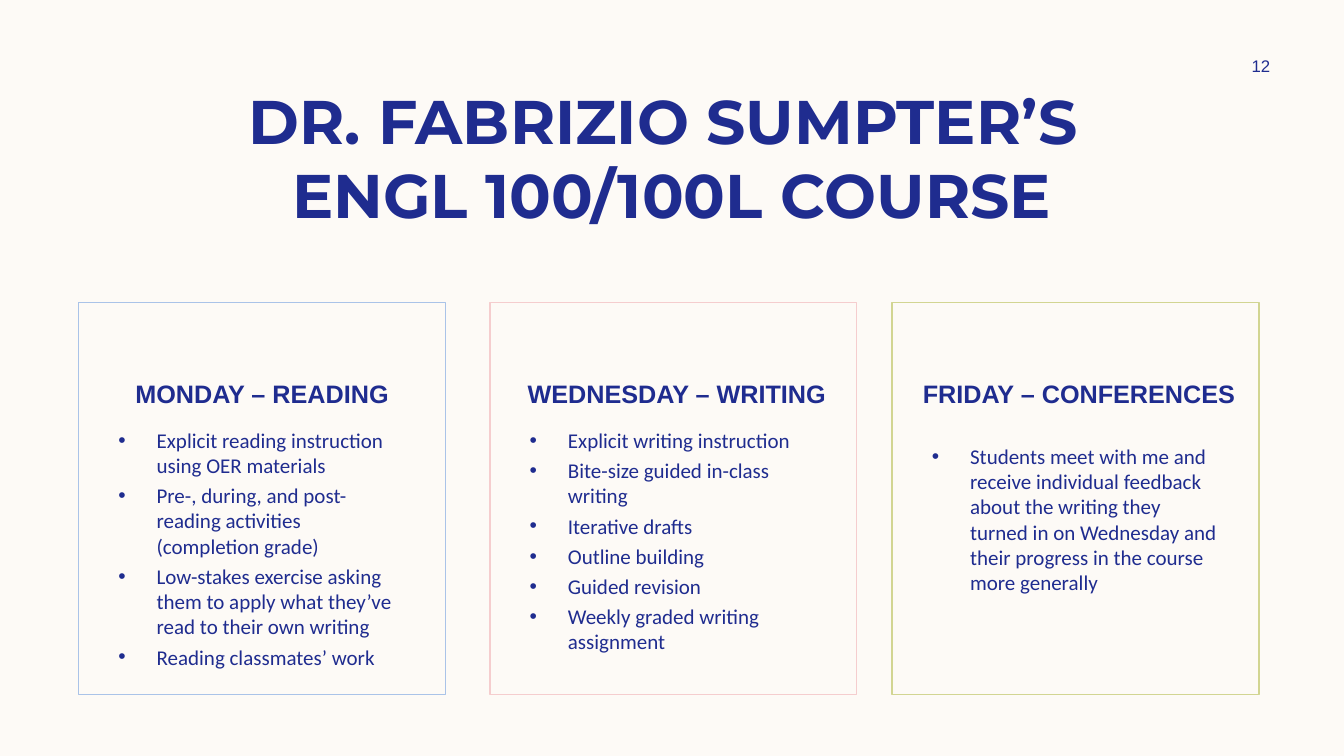
from dataclasses import dataclass

from lxml import etree
from pptx import Presentation
from pptx.dml.color import RGBColor
from pptx.enum.shapes import MSO_SHAPE
from pptx.enum.text import MSO_ANCHOR, PP_ALIGN
from pptx.oxml.ns import qn
from pptx.util import Inches, Pt

RECTANGLE = MSO_SHAPE.RECTANGLE
TOP, MIDDLE = MSO_ANCHOR.TOP, MSO_ANCHOR.MIDDLE
LEFT, CENTER = PP_ALIGN.LEFT, PP_ALIGN.CENTER

WIDTH, HEIGHT = Inches(13.33), Inches(7.5)
COLUMNS, ROWS = 160, 90
NAVY, CREAM = "1F2C8F", "FDFAF6"
CARD_ROW, CARD_COLUMNS, CARD_ROWS = 36, 43.68, 46.68
LIST_INSET, LIST_COLUMNS, LIST_ROWS = 3.55, 36.36, 28.92
BULLET_INDENT = Inches(0.38)


@dataclass(frozen=True)
class Area:
    column: float
    row: float
    columns: float
    rows: float

    def emu(self) -> tuple[int, int, int, int]:
        return (
            round(WIDTH * self.column / COLUMNS),
            round(HEIGHT * self.row / ROWS),
            round(WIDTH * self.columns / COLUMNS),
            round(HEIGHT * self.rows / ROWS),
        )


@dataclass(frozen=True)
class DayCard:
    heading: str
    border: str
    column: float
    list_row: float
    activities: tuple[str, ...]


DAY_CARDS = (
    DayCard("MONDAY – READING", "AAC3E8", 9.36, 50.28, (
        "Explicit reading instruction using OER materials",
        "Pre-, during, and post-reading activities (completion grade)",
        "Low-stakes exercise asking them to apply what they’ve read to their own writing",
        "Reading classmates’ work",
    )),
    DayCard(" WEDNESDAY – WRITING", "F5CDCE", 58.32, 50.28, (
        "Explicit writing instruction",
        "Bite-size guided in-class writing",
        "Iterative drafts",
        "Outline building",
        "Guided revision",
        "Weekly graded writing assignment",
    )),
    DayCard(" FRIDAY – CONFERENCES", "D2D592", 106.2, 52.2, (
        "Students meet with me and receive individual feedback about the writing they "
        "turned in on Wednesday and their progress in the course more generally",
    )),
)


def color(value: str) -> RGBColor:
    return RGBColor.from_string(value)


def add_bullet(paragraph) -> None:
    paragraph.space_before = Pt(3.6)
    properties = paragraph._p.get_or_add_pPr()
    properties.set("marL", str(BULLET_INDENT))
    properties.set("indent", str(-BULLET_INDENT))
    etree.SubElement(properties, qn("a:buFont")).set("typeface", "Arial")
    etree.SubElement(properties, qn("a:buChar")).set("char", "•")


def write(shape, *texts: str, font: str, size: float, bold: bool = False,
          align=CENTER, anchor=TOP, top_inset: float = 0.05, bullets: bool = False) -> None:
    frame = shape.text_frame
    frame.word_wrap = True
    frame.vertical_anchor = anchor
    frame.margin_top = Inches(top_inset)
    for index, text in enumerate(texts):
        paragraph = frame.add_paragraph() if index else frame.paragraphs[0]
        paragraph.text = text
        paragraph.alignment = align
        if bullets:
            add_bullet(paragraph)
        for run in paragraph.runs:
            run.font.name = font
            run.font.size = Pt(size)
            run.font.bold = bold
            run.font.color.rgb = color(NAVY)


def add_text(slide, area: Area, *texts: str, **text_format) -> None:
    write(slide.shapes.add_textbox(*area.emu()), *texts, **text_format)


def add_day_card(slide, card: DayCard) -> None:
    area = Area(card.column, CARD_ROW, CARD_COLUMNS, CARD_ROWS)
    frame = slide.shapes.add_shape(RECTANGLE, *area.emu())
    frame.shadow.inherit = False
    frame.fill.background()
    frame.line.color.rgb = color(card.border)
    frame.line.width = Pt(1)
    write(frame, card.heading, font="Arial", size=18, bold=True, top_inset=0.75)
    list_area = Area(card.column + LIST_INSET, card.list_row, LIST_COLUMNS, LIST_ROWS)
    add_text(slide, list_area, *card.activities,
             font="Calibri", size=15, align=LEFT, bullets=True)


def main() -> None:
    presentation = Presentation()
    presentation.slide_width, presentation.slide_height = WIDTH, HEIGHT
    slide = presentation.slides.add_slide(presentation.slide_layouts[6])
    slide.background.fill.solid()
    slide.background.fill.fore_color.rgb = color(CREAM)

    add_text(slide, Area(10, 9.24, 140, 10.08),
             "DR. FABRIZIO SUMPTER’S \nENGL 100/100L COURSE",
             font="Montserrat", size=44, bold=True)
    add_text(slide, Area(143.64, 6, 12.96, 3.6), "12",
             font="Arial", size=12, anchor=MIDDLE)
    for card in DAY_CARDS:
        add_day_card(slide, card)

    presentation.save("out.pptx")


if __name__ == "__main__":
    main()
